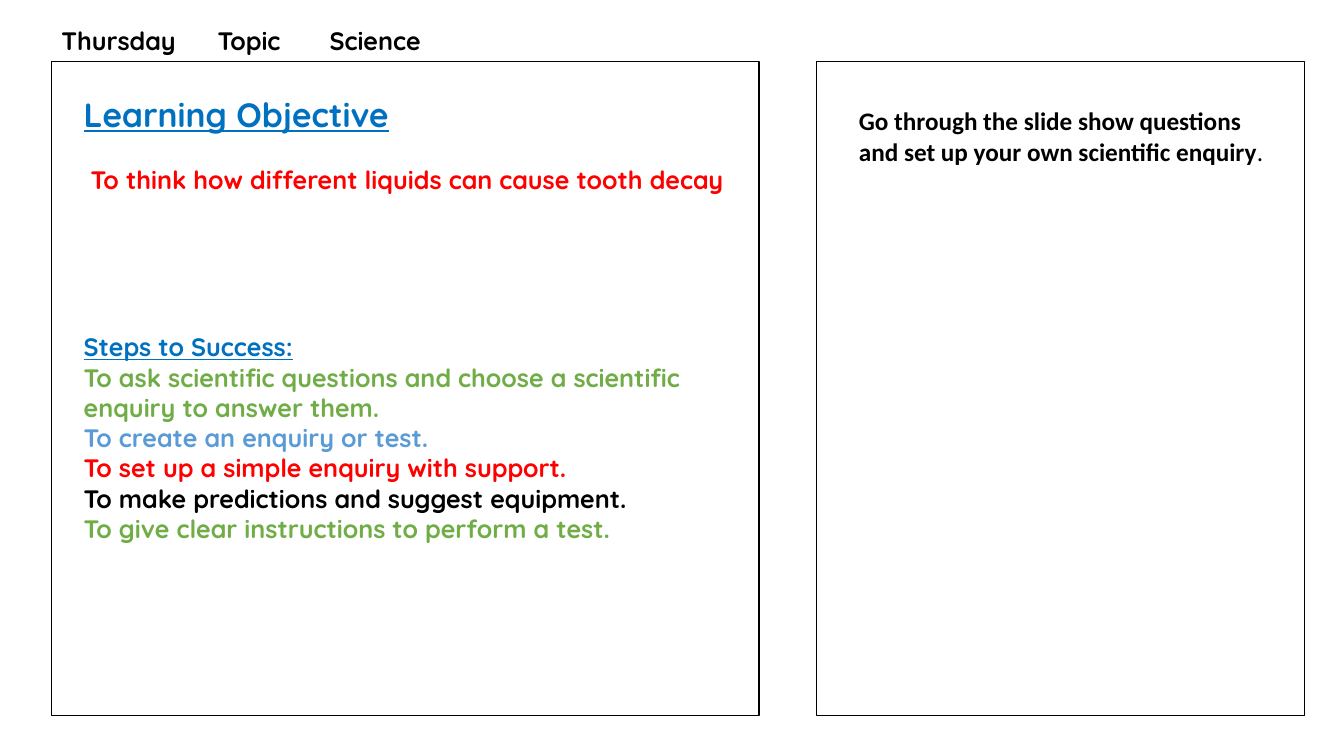
from lxml import etree
from pptx import Presentation
from pptx.dml.color import RGBColor
from pptx.enum import shapes, text
from pptx.oxml import ns
from pptx.util import Inches, Pt

BLACK = RGBColor(0x00, 0x00, 0x00)
BLUE = RGBColor(0x00, 0x70, 0xC0)
LIGHT_BLUE = RGBColor(0x5B, 0x9B, 0xD5)
RED = RGBColor(0xFF, 0x00, 0x00)
GREEN = RGBColor(0x70, 0xAD, 0x47)

# Content: text, colour, size, underlined
HEADER = [("Thursday\tTopic\tScience", BLACK, 18, False)]
HEADER_TABS = (1.55, 2.66)
OBJECTIVE = [
    ("Learning Objective", BLUE, 24, True),
    ("To think how different liquids can cause tooth decay", RED, 18, False),
]
STEPS = [
    ("Steps to Success:", BLUE, 18, True),
    ("To ask scientific questions and choose a scientific enquiry to answer them.",
     GREEN, 18, False),
    ("To create an enquiry or test.", LIGHT_BLUE, 18, False),
    ("To set up a simple enquiry with support.", RED, 18, False),
    ("To make predictions and suggest equipment.", BLACK, 18, False),
    ("To give clear instructions to perform a test.", GREEN, 18, False),
]
TASK = "Go through the slide show questions and set up your own scientific enquiry"

# Panels: left and width
PANEL_TOP, PANEL_HEIGHT = 0.61, 6.49
PANELS = [(0.51, 7.02), (8.1, 4.84)]


def place(box, left, top, width, height):
    box.left, box.top = Inches(left), Inches(top)
    box.width, box.height = Inches(width), Inches(height)


def write(box, lines, font_name="Quicksand", wrap=True):
    frame = box.text_frame
    frame.word_wrap = wrap
    frame.auto_size = text.MSO_AUTO_SIZE.NONE
    frame.vertical_anchor = text.MSO_ANCHOR.TOP
    for index, (words, colour, size, underlined) in enumerate(lines):
        line = frame.add_paragraph() if index else frame.paragraphs[0]
        line.add_run().text = words
        line.alignment = text.PP_ALIGN.LEFT
        line.space_before = Pt(0)
        font = line.font
        font.name, font.size, font.bold = font_name, Pt(size), True
        font.underline = underlined
        font.color.rgb = colour
    return frame.paragraphs


prs = Presentation()
prs.slide_width, prs.slide_height = Inches(13.33), Inches(7.5)
slide = prs.slides.add_slide(prs.slide_layouts[1])

# Outlined panels
for left, width in PANELS:
    panel = slide.shapes.add_shape(
        shapes.MSO_SHAPE.RECTANGLE, Inches(left), Inches(PANEL_TOP),
        Inches(width), Inches(PANEL_HEIGHT))
    panel.shadow.inherit = False
    panel.fill.background()
    panel.line.color.rgb = BLACK
    panel.line.width = Pt(1)

# Learning objective
objective = slide.shapes.title
place(objective, 0.73, 0.88, 6.99, 1.85)
aim = write(objective, OBJECTIVE)[1]
aim.space_before = Pt(21.5)
aim._p.get_or_add_pPr().set("marL", str(Inches(0.07)))

# Steps to success, without bullets
steps = slide.placeholders[1]
place(steps, 0.73, 3.24, 6.25, 2.83)
for step in write(steps, STEPS):
    props = step._p.get_or_add_pPr()
    props.set("marL", "0")
    props.set("indent", "0")
    bullet = etree.Element(ns.qn("a:buNone"))
    props.find(ns.qn("a:spcBef")).addnext(bullet)

# Lesson header, spaced by tab stops
header = slide.shapes.add_textbox(0, 0, 0, 0)
place(header, 0.51, 0.2, 3.91, 0.4)
props = write(header, HEADER, wrap=False)[0]._p.get_or_add_pPr()
tabs = etree.Element(ns.qn("a:tabLst"))
props.find(ns.qn("a:spcBef")).addnext(tabs)
for stop in HEADER_TABS:
    etree.SubElement(tabs, ns.qn("a:tab"), pos=str(Inches(stop)), algn="l")

# Task
task = slide.shapes.add_textbox(0, 0, 0, 0)
place(task, 8.42, 1, 4.39, 0.71)
full_stop = write(task, [(TASK, BLACK, 18, False)], "Calibri")[0].add_run()
full_stop.text = "."
full_stop.font.bold = False

prs.save("out.pptx")
